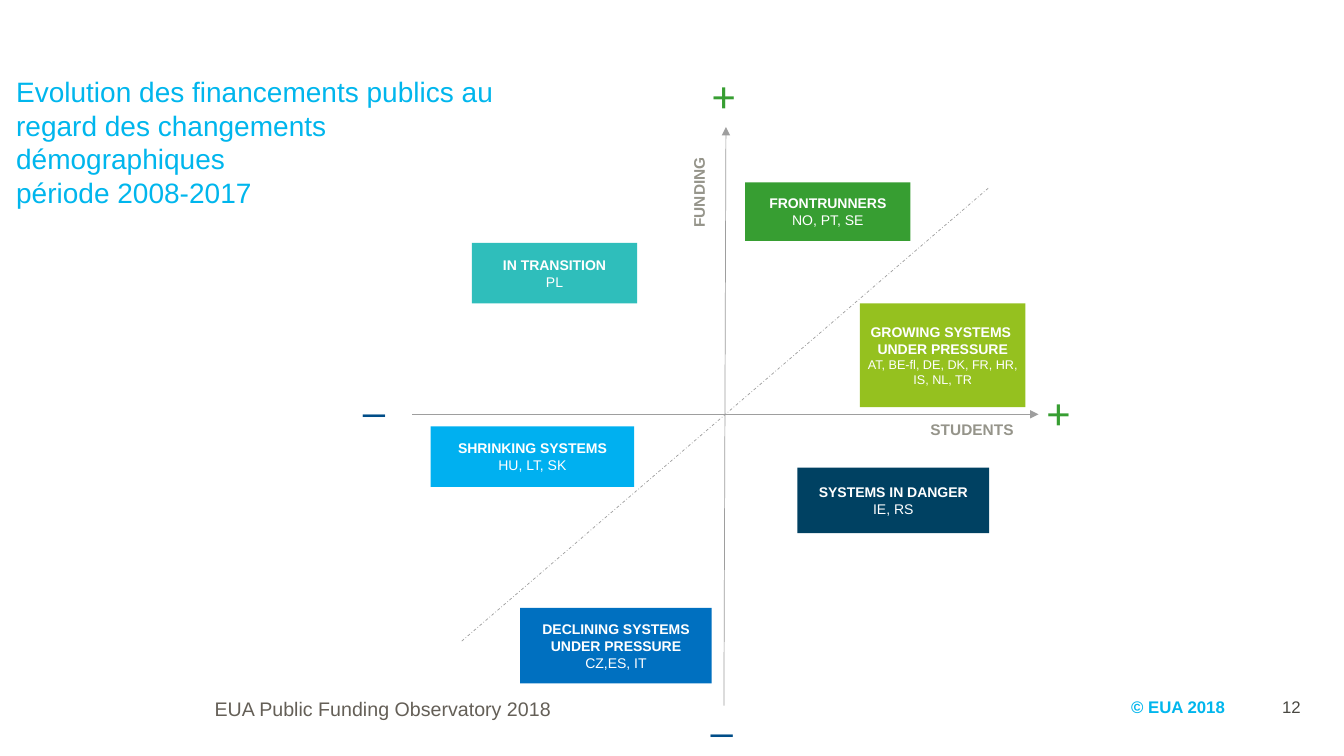
from lxml import etree
from pptx import Presentation
from pptx.dml.color import RGBColor
from pptx.enum.dml import MSO_LINE
from pptx.enum.shapes import MSO_CONNECTOR, MSO_SHAPE
from pptx.enum.text import MSO_ANCHOR, MSO_AUTO_SIZE, PP_ALIGN
from pptx.oxml.ns import qn
from pptx.util import Inches, Pt

LEFT, CENTER, RIGHT = PP_ALIGN.LEFT, PP_ALIGN.CENTER, PP_ALIGN.RIGHT
TOP, MIDDLE = MSO_ANCHOR.TOP, MSO_ANCHOR.MIDDLE
NO_FIT = MSO_AUTO_SIZE.NONE
DASH_DOT = MSO_LINE.DASH_DOT
RECTANGLE = MSO_SHAPE.RECTANGLE
STRAIGHT = MSO_CONNECTOR.STRAIGHT
TITLE_ONLY = 5

CYAN, GREEN, NAVY = "00B6ED", "379E32", "004D88"
AXIS_GREY, LABEL_GREY, WHITE = "9E9E9E", "95948A", "FFFFFF"

SYSTEMS = [
    ((4.68, 2.41, 1.64, 0.6), "2FBEBB", ["IN TRANSITION"], "PL", 10),
    ((4.27, 4.23, 2.02, 0.6), "00B0F0", ["SHRINKING SYSTEMS"], "HU, LT, SK", 10),
    ((5.16, 6.03, 1.9, 0.75), "0070C0",
     ["DECLINING SYSTEMS UNDER PRESSURE"], "CZ,ES, IT", 10),
    ((7.91, 4.64, 1.9, 0.65), "004162", ["SYSTEMS IN DANGER"], "IE, RS", 10),
    ((8.53, 3.01, 1.64, 1.03), "95C11F",
     ["GROWING SYSTEMS ", "UNDER PRESSURE"],
     "AT, BE-fl, DE, DK, FR, HR, IS, NL, TR", 9),
    ((7.39, 1.81, 1.64, 0.58), GREEN, ["FRONTRUNNERS"], "NO, PT, SE", 10),
]

AXES = [
    ((7.18, 7), (7.2, 1.26)),
    ((4.09, 4.11), (10.3, 4.11)),
]

SIGNS = [
    ("+", (10.29, 3.77, 0.44, 0.66), GREEN),
    ("+", (6.97, 0.62, 0.44, 0.66), GREEN),
    ("_", (3.5, 3.59, 0.36, 0.66), NAVY),
    ("_", (6.95, 6.76, 0.36, 0.66), NAVY),
]


def rgb(color):
    return RGBColor.from_string(color)


def set_attributes(target, values):
    for name, value in values.items():
        setattr(target, name, value)


def write_lines(frame, lines, color, align=LEFT, font="Arial"):
    for index, (text, size, bold) in enumerate(lines):
        paragraph = frame.paragraphs[0] if index == 0 else frame.add_paragraph()
        paragraph.alignment = align
        run = paragraph.add_run()
        run.text = text
        set_attributes(run.font, {"name": font, "size": Pt(size), "bold": bold})
        run.font.color.rgb = rgb(color)


def add_label(slide, box, text, size, color, bold=False, align=LEFT,
              anchor=TOP, font="Arial"):
    label = slide.shapes.add_textbox(*map(Inches, box))
    set_attributes(label.text_frame, {"word_wrap": True, "vertical_anchor": anchor})
    write_lines(label.text_frame, [(text, size, bold)], color, align, font)
    return label.text_frame


def add_title(slide, box, lines):
    title = slide.shapes.title
    left, top, width, height = map(Inches, box)
    set_attributes(title, {"left": left, "top": top, "width": width, "height": height})
    set_attributes(title.text_frame, {
        "word_wrap": True, "vertical_anchor": TOP, "auto_size": NO_FIT})
    write_lines(title.text_frame, [(line, 20, False) for line in lines], CYAN)


def add_system(slide, box, color, heading, countries, countries_size):
    system = slide.shapes.add_shape(RECTANGLE, *map(Inches, box))
    system.shadow.inherit = False
    system.fill.solid()
    system.fill.fore_color.rgb = rgb(color)
    system.line.fill.background()
    inset = Inches(0.04)
    set_attributes(system.text_frame, {
        "word_wrap": True, "vertical_anchor": MIDDLE,
        "margin_left": inset, "margin_right": inset,
        "margin_top": inset, "margin_bottom": inset})
    lines = [(line, 10, True) for line in heading]
    lines.append((countries, countries_size, False))
    write_lines(system.text_frame, lines, WHITE, CENTER)


def add_line(slide, start, end, dash=None, arrow=False):
    line = slide.shapes.add_connector(STRAIGHT, *map(Inches, start + end))
    line.line.color.rgb = rgb(AXIS_GREY)
    line.line.width = Pt(0.5)
    if dash is not None:
        line.line.dash_style = dash
    if arrow:
        outline = line.line._get_or_add_ln()
        etree.SubElement(outline, qn("a:tailEnd"), type="triangle")
    etree.SubElement(line._element.spPr, qn("a:effectLst"))


def main():
    deck = Presentation()
    set_attributes(deck, {"slide_width": Inches(13.33), "slide_height": Inches(7.5)})
    slide = deck.slides.add_slide(deck.slide_layouts[TITLE_ONLY])

    add_title(slide, (0.06, 0.69, 5.1, 1.45), [
        "Evolution des financements publics au regard des changements démographiques",
        "période 2008-2017"])

    for start, end in AXES:
        add_line(slide, start, end, arrow=True)
    add_line(slide, (4.58, 6.36), (9.81, 1.86), dash=DASH_DOT)

    for system in SYSTEMS:
        add_system(slide, *system)
    for sign, box, color in SIGNS:
        add_label(slide, box, sign, 32, color, font="Calibri")

    add_label(slide, (9.13, 4.12, 1.18, 0.31), "STUDENTS", 11, LABEL_GREY, bold=True)
    funding = add_label(slide, (6.79, 1.41, 0.4, 1), "FUNDING", 11, LABEL_GREY,
                        bold=True, align=CENTER)
    funding._txBody.bodyPr.set("vert", "vert270")

    source = add_label(slide, (2.03, 6.89, 4.05, 0.4),
                       "EUA Public Funding Observatory 2018", 14, "645F57")
    source.paragraphs[0].line_spacing = 0.9
    add_label(slide, (11.12, 6.81, 1.13, 0.4), "© EUA 2018", 12, CYAN,
              bold=True, anchor=MIDDLE)
    add_label(slide, (12.4, 6.81, 0.6, 0.4), "12", 12, "494842",
              align=RIGHT, anchor=MIDDLE)

    deck.save("out.pptx")


if __name__ == "__main__":
    main()
